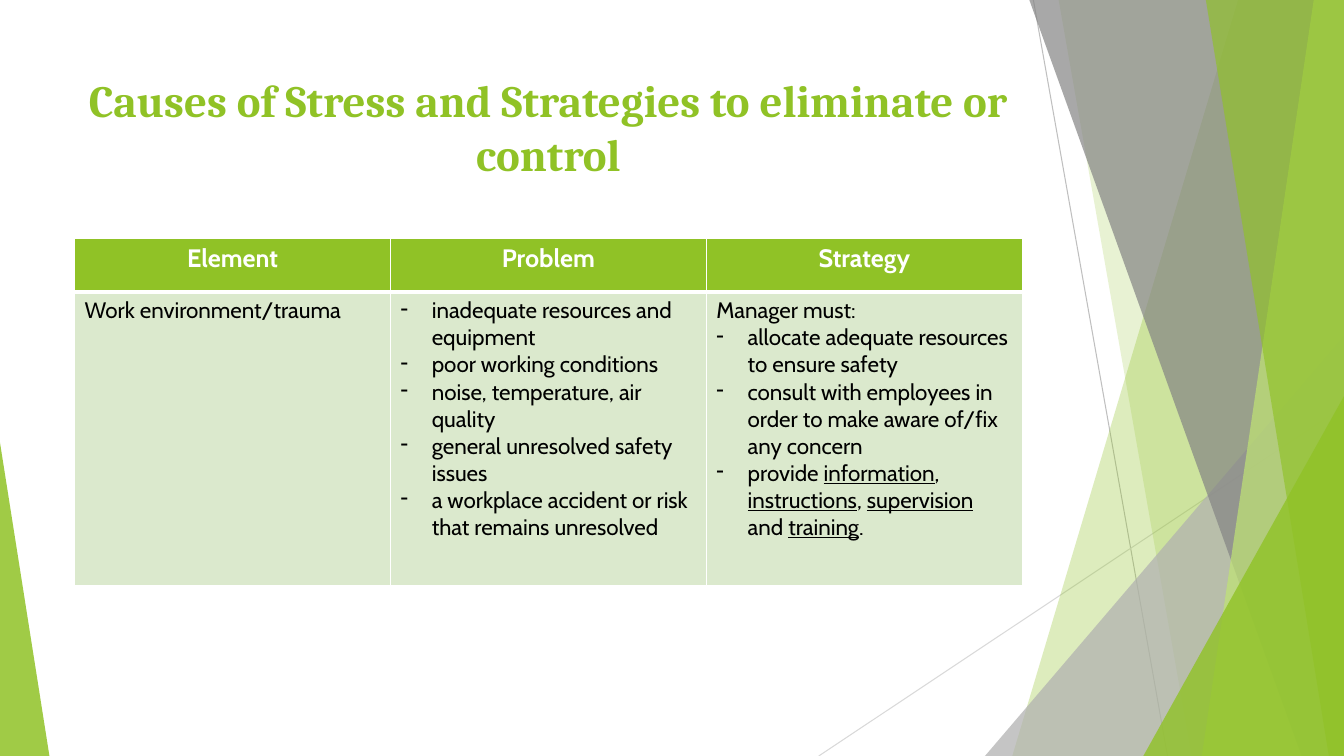
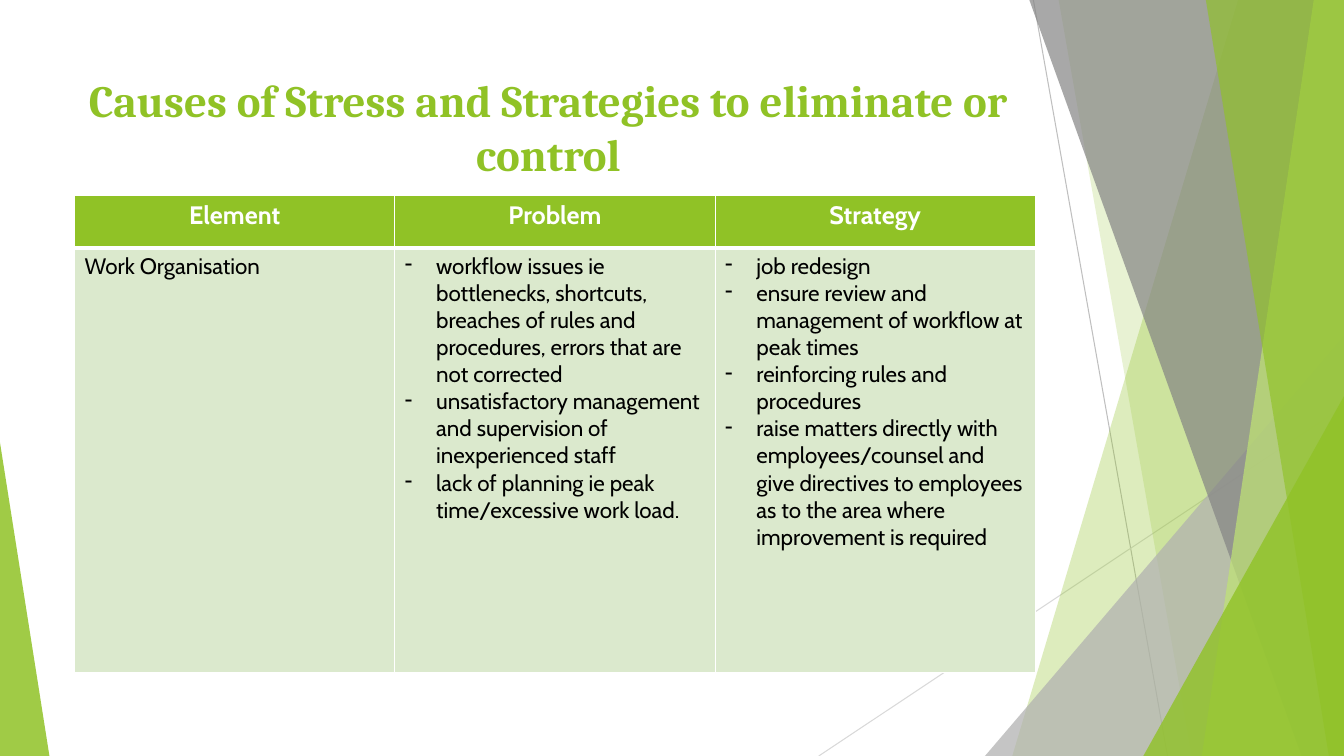
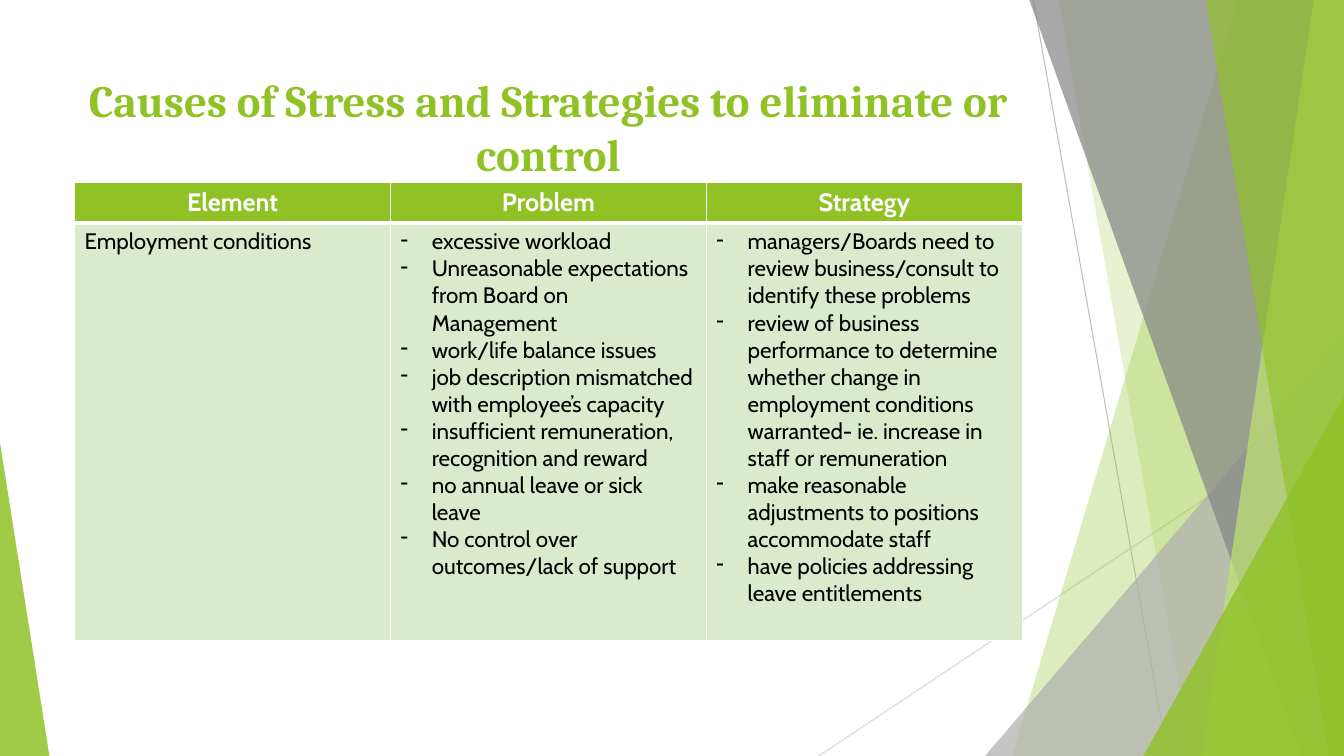
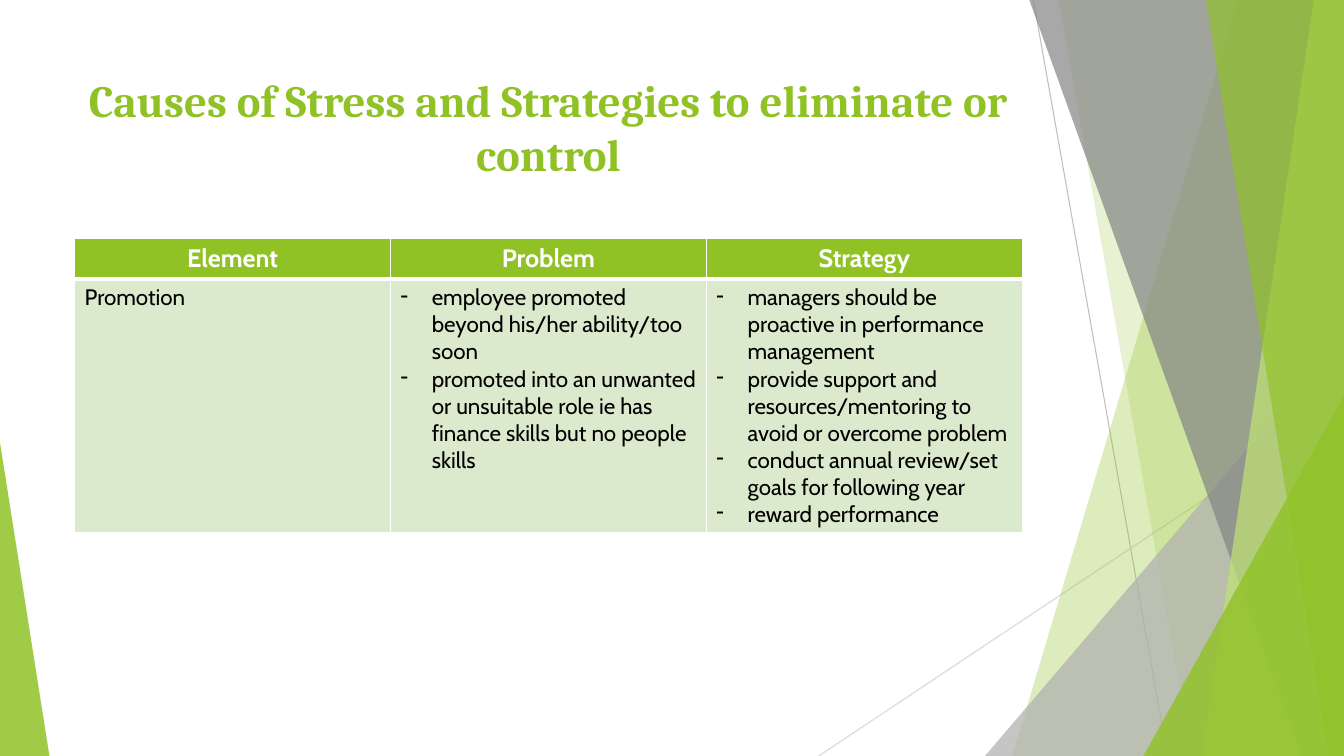
import lxml.etree
import pptx
import pptx.dml.color
import pptx.enum.shapes
import pptx.enum.text
import pptx.oxml.ns
import pptx.util

COLORS = {
    "green": "90C226", "lime": "C0E474", "silver": "B0B0B0", "gray": "848484",
    "steep_line": "BFBFBF", "flat_line": "D9D9D9",
    "body": "DBE9CD", "white": "FFFFFF", "black": "000000",
}
FORMATS = {
    "title": {"name": "Cambria", "size": pptx.util.Pt(32), "bold": True},
    "header": {"name": "Cabin", "size": pptx.util.Pt(18), "bold": True},
    "body": {"name": "Cabin", "size": pptx.util.Pt(16), "bold": False},
}
HEADER_BORDERS = {"lnL": 1, "lnR": 1, "lnT": 1, "lnB": 3}
BODY_BORDERS = {"lnL": 1, "lnR": 1, "lnT": 3, "lnB": 1}
HEADINGS = ["Element", "Problem", "Strategy"]
TITLE = "Causes of Stress and Strategies to eliminate or control"
LEFT, WIDTH = 5.55, 70.52

CAUSES = [
    {
        "top": 31.47, "width": WIDTH, "rows": (7.2, 38.8),
        "cells": [
            ["Work environment/trauma"],
            [
                "- inadequate resources and equipment",
                "- poor working conditions",
                "- noise, temperature, air quality",
                "- general unresolved safety issues",
                "- a workplace accident or risk that remains unresolved",
            ],
            [
                "Manager must:",
                "- allocate adequate resources to ensure safety",
                "- consult with employees in order to make aware of/fix any concern",
                "- provide _information_, _instructions_, _supervision_ and _training_.",
            ],
        ],
    },
    {
        "top": 25.87, "width": 71.49, "rows": (6.93, 56.13),
        "cells": [
            ["Work Organisation"],
            [
                "- workflow issues ie bottlenecks, shortcuts, breaches of rules and "
                "procedures, errors that are not corrected",
                "- unsatisfactory management and supervision of inexperienced staff",
                "- lack of planning ie peak time/excessive work load.",
            ],
            [
                "- job redesign",
                "- ensure review and management of workflow at peak times",
                "- reinforcing rules and procedures",
                "- raise matters directly with employees/counsel and give directives "
                "to employees as to the area where improvement is required",
            ],
        ],
    },
    {
        "top": 24.13, "width": WIDTH, "rows": (5.2, 55.2),
        "cells": [
            ["Employment conditions"],
            [
                "- excessive workload",
                "- Unreasonable expectations from Board on Management",
                "- work/life balance issues",
                "- job description mismatched with employee’s capacity",
                "- insufficient remuneration, recognition and reward",
                "- no annual leave or sick leave",
                "- No control over outcomes/lack of support",
            ],
            [
                "- managers/Boards need to review business/consult to identify these problems",
                "- review of business performance to determine whether change in employment "
                "conditions warranted- ie. increase in staff or remuneration",
                "- make reasonable adjustments to positions accommodate staff",
                "- have policies addressing leave entitlements",
            ],
        ],
    },
    {
        "top": 31.47, "width": WIDTH, "rows": (5.47, 33.5),
        "cells": [
            ["Promotion"],
            [
                "- employee promoted beyond his/her ability/too soon",
                "- promoted into an unwanted or unsuitable role ie has finance skills "
                "but no people skills",
            ],
            [
                "- managers should be proactive in performance management",
                "- provide support and resources/mentoring to avoid or overcome problem",
                "- conduct annual review/set goals for following year",
                "- reward performance",
            ],
        ],
    },
]


def color(key):
    """Return the named colour as an RGB value."""
    return pptx.dml.color.RGBColor.from_string(COLORS[key])


def add_xml(parent, tag, **attributes):
    """Append a drawing element to its parent."""
    values = {key: str(value) for key, value in attributes.items()}
    return lxml.etree.SubElement(parent, pptx.oxml.ns.qn(f"a:{tag}"), values)


class Deck:
    """Holds the shared style and the current slide; lengths are percent of the slide."""

    def __init__(self):
        """Start a widescreen deck whose layout keeps only its title."""
        self.deck = pptx.Presentation()
        self.deck.slide_width = pptx.util.Inches(13.33)
        self.deck.slide_height = pptx.util.Inches(7.5)
        self.layout = self.deck.slide_layouts.get_by_name("Title Only")
        for placeholder in list(self.layout.placeholders):
            if placeholder.placeholder_format.idx:
                self.layout.shapes.element.remove(placeholder.element)
        self.slide = None

    def x(self, share):
        """Convert a percentage of the width."""
        return round(self.deck.slide_width * share / 100)

    def y(self, share):
        """Convert a percentage of the height."""
        return round(self.deck.slide_height * share / 100)

    def new_slide(self):
        """Add a slide and make it current."""
        self.slide = self.deck.slides.add_slide(self.layout)

    def share(self, shape):
        """Move a shape from the current slide to the layout."""
        self.layout.shapes.element.append(shape.element)

    def ray(self, start, end, tint):
        """Draw a thin backdrop line."""
        ray = self.slide.shapes.add_connector(
            pptx.enum.shapes.MSO_CONNECTOR.STRAIGHT,
            self.x(start[0]), self.y(start[1]), self.x(end[0]), self.y(end[1]))
        ray.line.color.rgb = color(tint)
        ray.line.width = pptx.util.Pt(0.75)
        add_xml(ray.element.find(pptx.oxml.ns.qn("p:spPr")), "effectLst")
        self.share(ray)

    def glaze(self, shape, tint, opacity):
        """Give a backdrop shape a translucent fill and no outline."""
        shape.shadow.inherit = False
        shape.fill.solid()
        shape.fill.fore_color.rgb = color(tint)
        fill = next(shape.element.iter(pptx.oxml.ns.qn("a:srgbClr")))
        add_xml(fill, "alpha", val=opacity * 1000)
        shape.line.fill.background()
        self.share(shape)

    def sheet(self, top_x, bottom_x, tint, opacity):
        """Draw a full-height sheet that reaches the right edge."""
        outline = self.slide.shapes.build_freeform(self.x(top_x), 0)
        corners = [(100, 0), (100, 100), (bottom_x, 100)]
        outline.add_line_segments([(self.x(x), self.y(y)) for x, y in corners])
        self.glaze(outline.convert_to_shape(), tint, opacity)

    def wedge(self, left, right, top, apex, tint, opacity):
        """Draw a right triangle standing on the bottom edge."""
        wedge = self.slide.shapes.add_shape(
            pptx.enum.shapes.MSO_SHAPE.ISOSCELES_TRIANGLE,
            self.x(left), self.y(top), self.x(right - left), self.y(100 - top))
        wedge.adjustments[0] = apex
        self.glaze(wedge, tint, opacity)

    def backdrop(self):
        """Put the faceted backdrop on the layout."""
        self.ray((76.89, 0), (86.87, 100), "steep_line")
        self.ray((100, 53.73), (60.92, 100), "flat_line")
        self.sheet(92.12, 75.32, "green", 30)
        self.sheet(78.77, 88.67, "green", 20)
        self.wedge(73.29, 100, 44.4, 1, "silver", 72)
        self.sheet(76.59, 96.85, "gray", 70)
        self.sheet(97.75, 89.42, "lime", 70)
        self.sheet(89.72, 98.87, "green", 65)
        self.wedge(85.07, 100, 52.4, 1, "green", 80)
        self.wedge(0, 3.68, 58.53, 0, "green", 85)

    def add_text(self, paragraph, text, style, tint):
        """Add text whose parts between underscores are underlined."""
        for index, part in enumerate(text.split("_")):
            run = paragraph.add_run()
            run.text = part
            for key, value in FORMATS[style].items():
                setattr(run.font, key, value)
            run.font.color.rgb = color(tint)
            if index % 2:
                run.font.underline = True

    def title(self, text):
        """Fill and place the title."""
        title = self.slide.shapes.title
        places = {"left": self.x(LEFT), "top": self.y(8.93),
                  "width": self.x(WIDTH), "height": self.y(19.2)}
        for key, value in places.items():
            setattr(title, key, value)
        frame = title.text_frame
        frame.word_wrap = True
        frame.auto_size = pptx.enum.text.MSO_AUTO_SIZE.NONE
        frame.vertical_anchor = pptx.enum.text.MSO_ANCHOR.TOP
        frame.paragraphs[0].alignment = pptx.enum.text.PP_ALIGN.CENTER
        self.add_text(frame.paragraphs[0], text, "title", "green")

    def cell(self, cell, fill, borders):
        """Set the borders and the fill of a cell."""
        properties = cell._tc.get_or_add_tcPr()
        for side, width in borders.items():
            border = add_xml(properties, side, w=pptx.util.Pt(width))
            add_xml(add_xml(border, "solidFill"), "srgbClr", val=COLORS["white"])
        cell.fill.solid()
        cell.fill.fore_color.rgb = color(fill)

    def items(self, frame, texts):
        """Add paragraphs, with a hanging dash where the text starts with one."""
        for index, text in enumerate(texts):
            paragraph = frame.add_paragraph() if index else frame.paragraphs[0]
            if text.startswith("- "):
                properties = paragraph._p.get_or_add_pPr()
                indent = pptx.util.Inches(0.31)
                properties.set("marL", str(indent))
                properties.set("indent", str(-indent))
                add_xml(properties, "buChar", char="-")
            self.add_text(paragraph, text.removeprefix("- "), "body", "black")

    def table(self, top, width, rows, cells):
        """Draw the header row and one row of cells."""
        table = self.slide.shapes.add_table(
            len(rows), len(HEADINGS), self.x(LEFT), self.y(top),
            self.x(width), self.y(sum(rows))).table
        table.horz_banding = False
        for row, height in zip(table.rows, rows):
            row.height = self.y(height)
        for column, (heading, texts) in enumerate(zip(HEADINGS, cells)):
            header, body = table.cell(0, column), table.cell(1, column)
            self.cell(header, "green", HEADER_BORDERS)
            self.cell(body, "body", BODY_BORDERS)
            label = header.text_frame.paragraphs[0]
            label.alignment = pptx.enum.text.PP_ALIGN.CENTER
            self.add_text(label, heading, "header", "white")
            self.items(body.text_frame, texts)


def main():
    """Build and save the slides."""
    stress = Deck()
    for number, cause in enumerate(CAUSES):
        stress.new_slide()
        if number == 0:
            stress.backdrop()
        stress.title(TITLE)
        stress.table(**cause)
    stress.deck.save("out.pptx")


if __name__ == "__main__":
    main()
